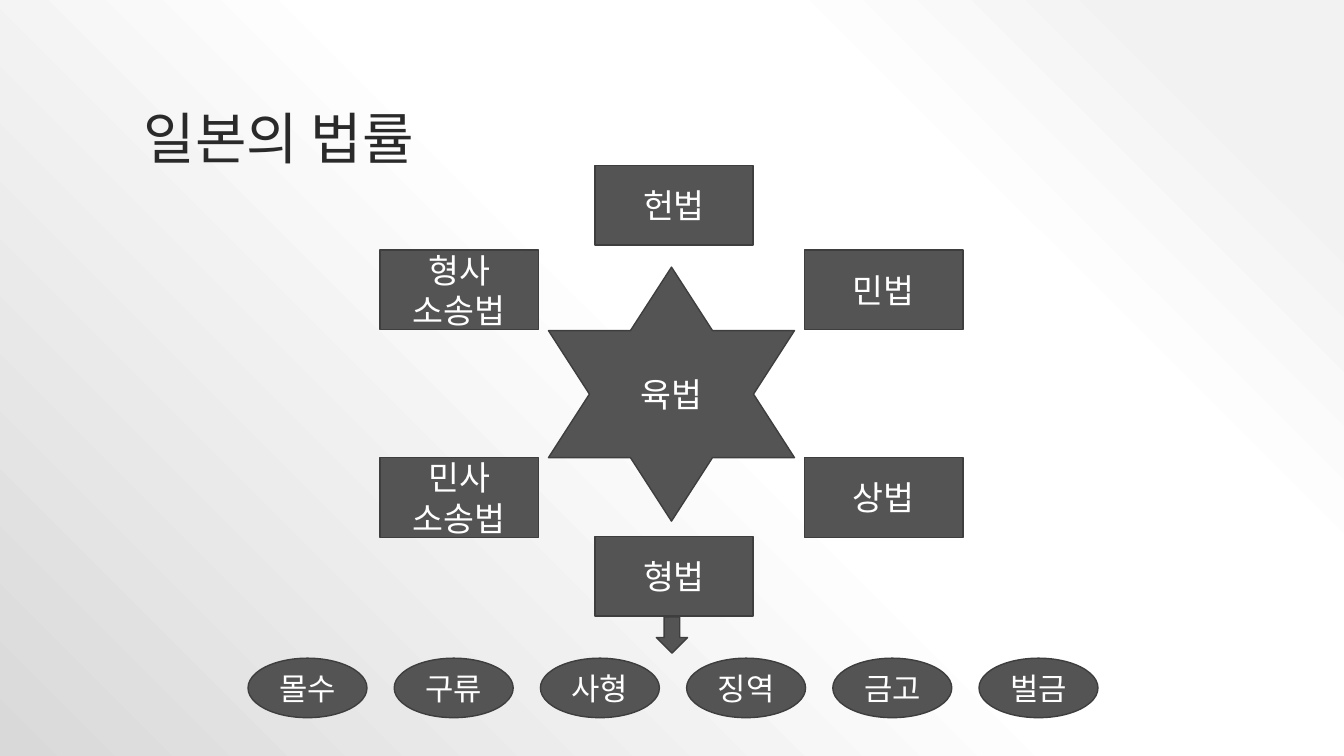
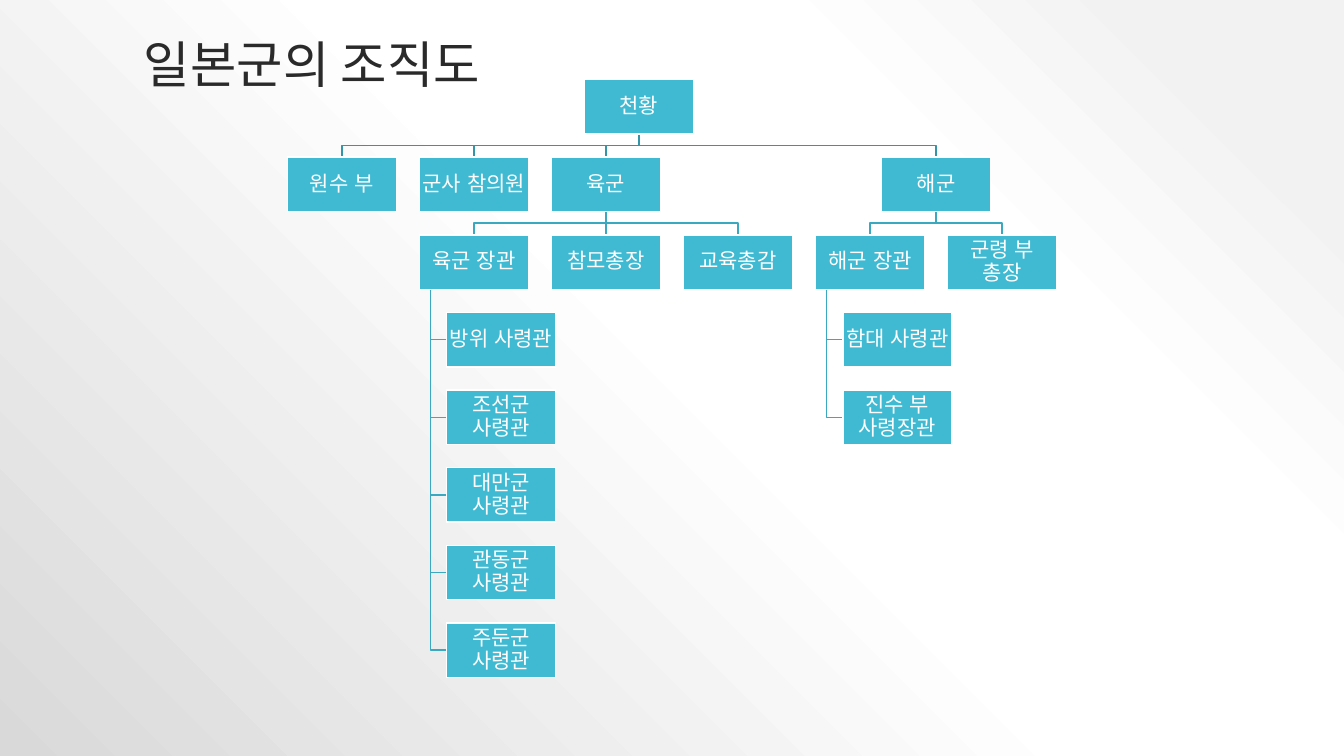
from lxml.etree import SubElement
from pptx import Presentation
from pptx.dml.color import RGBColor
from pptx.enum.shapes import MSO_CONNECTOR as Connector
from pptx.enum.shapes import MSO_SHAPE as Shape
from pptx.enum.text import MSO_ANCHOR as Anchor
from pptx.enum.text import PP_ALIGN as Align
from pptx.oxml import parse_xml
from pptx.oxml.ns import nsdecls, qn
from pptx.util import Inches, Pt

WHITE, INK = "FFFFFF", "2A2A2A"
GRAY, GRAY_EDGE = "545454", "3E3E3E"
TEAL, TOP_LINK, LINK = "40BAD2", "3395A8", "3AA9BF"
BODY_FONT, TITLE_FONT = "TeX Gyre Adventor", "Noto Sans CJK KR"
BACKDROP = ((10, "F2F2F2"), (28, WHITE), (48, WHITE), (100, "D9D9D9"))

LEFT, TOP, COLUMN, ROW = 2.85, 0.79, 1.31, 0.77
BOX_WIDTH, BOX_HEIGHT = 1.08, 0.54
STAFF_INDENT, TRUNK_INDENT = 0.27, 0.11

LAWS = (
    ("형사 소송법", 3.77, 2.48),
    ("헌법", 5.9, 1.64),
    ("민법", 7.98, 2.48),
    ("민사 소송법", 3.77, 4.54),
    ("상법", 7.98, 4.54),
    ("형법", 5.9, 5.32),
)
PENALTIES = ("몰수", "구류", "사형", "징역", "금고", "벌금")

ARMY_STAFF = ("방위 사령관", "조선군 사령관", "대만군 사령관", "관동군 사령관", "주둔군 사령관")
NAVY_STAFF = ("함대 사령관", "진수 부 사령장관")
ARMY = (
    ("육군 장관", 1, (), ARMY_STAFF),
    ("참모총장", 2, (), ()),
    ("교육총감", 3, (), ()),
)
NAVY = (("해군 장관", 4, (), NAVY_STAFF), ("군령 부 총장", 5, (), ()))
BRANCHES = (
    ("원수 부", 0, (), ()),
    ("군사 참의원", 1, (), ()),
    ("육군", 2, ARMY, ()),
    ("해군", 4.5, NAVY, ()),
)
EMPEROR = ("천황", 2.25, BRANCHES, ())


def color(value):
    """Turn a hex string into a colour."""
    return RGBColor.from_string(value)


class Deck:
    """Hold the shared style and the current slide."""

    def __init__(self):
        """Start a wide presentation."""
        self.deck = Presentation()
        self.deck.slide_width = Inches(13.33)
        self.deck.slide_height = Inches(7.5)
        self.page = None

    def new_page(self, title, size, height):
        """Add a slide with the gradient background and a title."""
        self.page = self.deck.slides.add_slide(self.deck.slide_layouts[6])
        stops = "".join(
            f'<a:gs pos="{place * 1000}"><a:srgbClr val="{value}"/></a:gs>'
            for place, value in BACKDROP
        )
        self.page.element.cSld.insert(0, parse_xml(
            f'<p:bg {nsdecls("p", "a")}><p:bgPr><a:gradFill rotWithShape="1">'
            f'<a:gsLst>{stops}</a:gsLst><a:path path="circle">'
            '<a:fillToRect l="100000" b="100000"/></a:path></a:gradFill>'
            '<a:effectLst/></p:bgPr></p:bg>'
        ))
        box = self.page.shapes.add_textbox(
            Inches(1.33), Inches(0.3), Inches(10.67), Inches(height))
        self.set_text(box, title, size, INK, TITLE_FONT, Align.LEFT, 0.9)
        box.text_frame.vertical_anchor = Anchor.BOTTOM

    def set_text(self, box, text, size, ink=WHITE, font=BODY_FONT,
                 align=Align.CENTER, spacing=1.0):
        """Put one styled paragraph into a shape."""
        frame = box.text_frame
        frame.word_wrap = True
        frame.vertical_anchor = Anchor.MIDDLE
        frame.text = text
        para = frame.paragraphs[0]
        para.alignment = align
        para.line_spacing = spacing
        for span in para.runs:
            span.font.size = Pt(size)
            span.font.name = font
            span.font.color.rgb = color(ink)
            SubElement(span._r.get_or_add_rPr(), qn("a:ea"), typeface=font)

    def shape(self, kind, left, top, width, height, fill=GRAY, edge=GRAY_EDGE):
        """Draw a filled preset shape."""
        shape = self.page.shapes.add_shape(
            kind, Inches(left), Inches(top), Inches(width), Inches(height))
        shape.shadow.inherit = False
        shape.fill.solid()
        shape.fill.fore_color.rgb = color(fill)
        shape.line.color.rgb = color(edge)
        shape.line.width = Pt(1)
        return shape

    def label(self, kind, text, left, top, width, height, size=24):
        """Draw a gray shape with white text."""
        self.set_text(self.shape(kind, left, top, width, height), text, size)

    def post(self, text, left, top):
        """Draw one box of the organization chart."""
        box = self.shape(Shape.RECTANGLE, left, top, BOX_WIDTH, BOX_HEIGHT, TEAL, WHITE)
        self.set_text(box, text, 15, spacing=0.9)
        frame = box.text_frame
        frame.margin_left = frame.margin_right = Inches(0.01)
        frame.margin_top = frame.margin_bottom = Inches(0.01)

    def link(self, tint, *points):
        """Draw a straight line for two points or a bent one for more."""
        spots = [(Inches(x), Inches(y)) for x, y in points]
        if len(spots) == 2:
            line = self.page.shapes.add_connector(
                Connector.STRAIGHT, *spots[0], *spots[1])
            line.line.color.rgb = color(tint)
            SubElement(line._element.spPr, qn("a:effectLst"))
        else:
            builder = self.page.shapes.build_freeform(*spots[0])
            builder.add_line_segments(spots[1:], close=False)
            line = builder.convert_to_shape()
            line.fill.background()
            line.shadow.inherit = False
            line.line.color.rgb = color(tint)
        line.line.width = Pt(1)

    def branch(self, node, level=0):
        """Draw a post, its links and everything below it."""
        name, column, children, staff = node
        left, top = LEFT + COLUMN * column, TOP + ROW * level
        center, bottom, below = left + BOX_WIDTH / 2, top + BOX_HEIGHT, top + ROW
        middle = (bottom + below) / 2
        for child in children:
            target = LEFT + COLUMN * child[1] + BOX_WIDTH / 2
            bend = [] if child[1] == column else [(center, middle), (target, middle)]
            self.link(LINK if level else TOP_LINK,
                      (center, bottom), *bend, (target, below))
            self.branch(child, level + 1)
        trunk, staff_left = left + TRUNK_INDENT, left + STAFF_INDENT
        for index, member in enumerate(staff, 1):
            staff_top = top + ROW * index
            height = staff_top + BOX_HEIGHT / 2
            self.link(LINK, (trunk, bottom), (trunk, height), (staff_left, height))
            self.post(member, staff_left, staff_top)
        self.post(name, left, top)


def main():
    """Build both slides and save the file."""
    deck = Deck()

    deck.new_page("일본의 법률", 40, 1.45)
    deck.label(Shape.STAR_6_POINT, "육법", 5.44, 2.65, 2.44, 2.52)
    for name, left, top in LAWS:
        deck.label(Shape.RECTANGLE, name, left, top, 1.57, 0.79)
    deck.shape(Shape.DOWN_ARROW, 6.51, 6.12, 0.31, 0.36)
    for index, name in enumerate(PENALTIES):
        deck.label(Shape.OVAL, name, 2.46 + 1.45 * index, 6.53, 1.18, 0.59, 22)

    deck.new_page("일본군의 조직도", 36, 0.69)
    deck.branch(EMPEROR)

    deck.deck.save("out.pptx")


if __name__ == "__main__":
    main()
